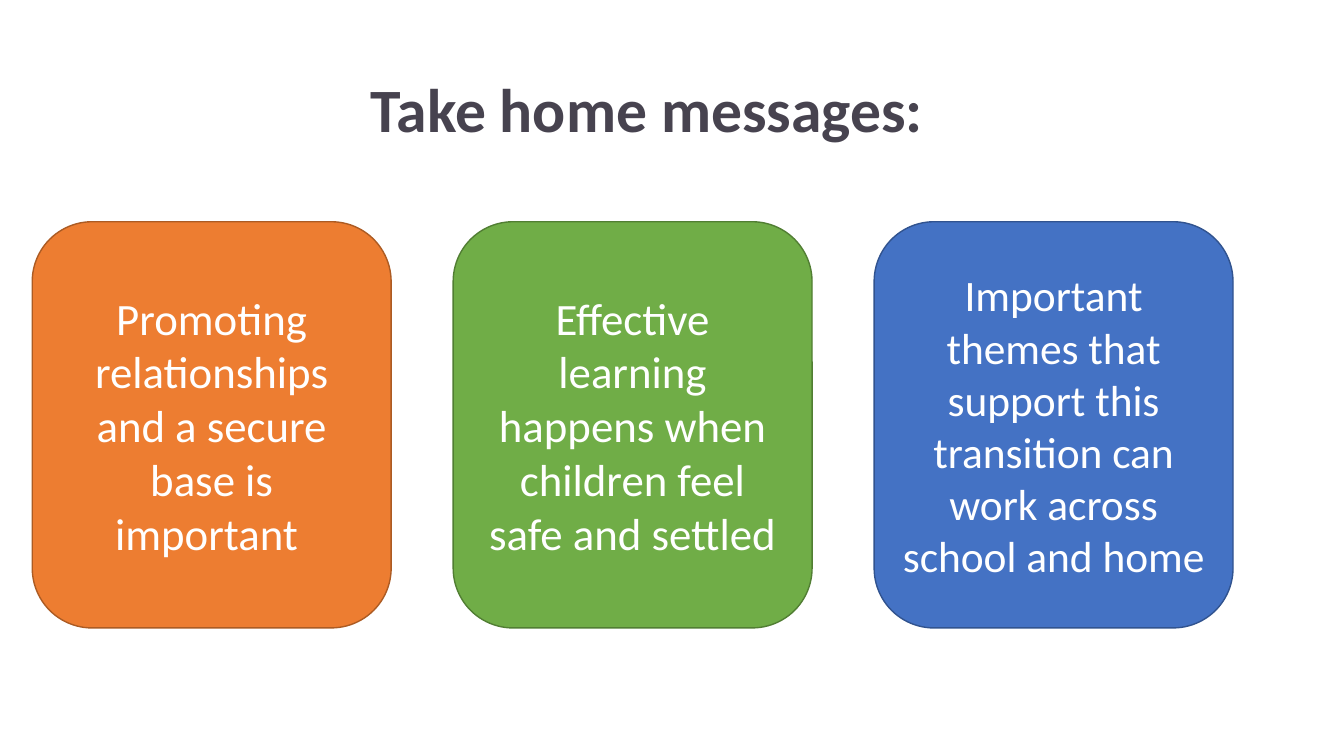
"""Build the slide of three take home messages."""
from pptx import Presentation, util as u
from pptx.dml.color import RGBColor
from pptx.enum import shapes, text

CARD_LEFT, CARD_TOP = 0.32, 2.2
CARD_WIDTH, CARD_HEIGHT = 3.56, 4.03
COLUMN_STEP = 4.175
MESSAGES = [
    ("Promoting relationships and a secure base is important ", 32, "ED7D31", "AC5B23"),
    ("Effective learning happens when children feel safe and settled", 32, "70AD47", "517E33"),
    ("Important themes that support this transition can work across school and home",
     31, "4472C4", "31538F"),
]


def color(value):
    return RGBColor.from_string(value)


def write(shape, wording, size, font_color, bold=False):
    frame = shape.text_frame
    frame.word_wrap = True
    frame.text = wording
    paragraph = frame.paragraphs[0]
    paragraph.alignment = text.PP_ALIGN.CENTER
    font = paragraph.runs[0].font
    font.name, font.size, font.bold = "Calibri", u.Pt(size), bold
    font.color.rgb = color(font_color)
    return paragraph


presentation = Presentation()
presentation.slide_width = u.Inches(13.33)
presentation.slide_height = u.Inches(7.5)
slide = presentation.slides.add_slide(presentation.slide_layouts[6])

for column, (wording, size, fill, line) in enumerate(MESSAGES):
    card = slide.shapes.add_shape(
        shapes.MSO_SHAPE.ROUNDED_RECTANGLE,
        u.Inches(CARD_LEFT + column * COLUMN_STEP), u.Inches(CARD_TOP),
        u.Inches(CARD_WIDTH), u.Inches(CARD_HEIGHT))
    card.shadow.inherit = False
    card.fill.solid()
    card.fill.fore_color.rgb = color(fill)
    card.line.color.rgb = color(line)
    card.line.width = u.Pt(1)
    card.text_frame.vertical_anchor = text.MSO_ANCHOR.MIDDLE
    write(card, wording, size, "FFFFFF")

title = slide.shapes.add_textbox(u.Inches(1.42), u.Inches(0.74), u.Inches(10), u.Inches(0.78))
heading = write(title, "Take home messages:", 44, "47434F", bold=True)
heading.line_spacing = 0.9

presentation.save("out.pptx")
